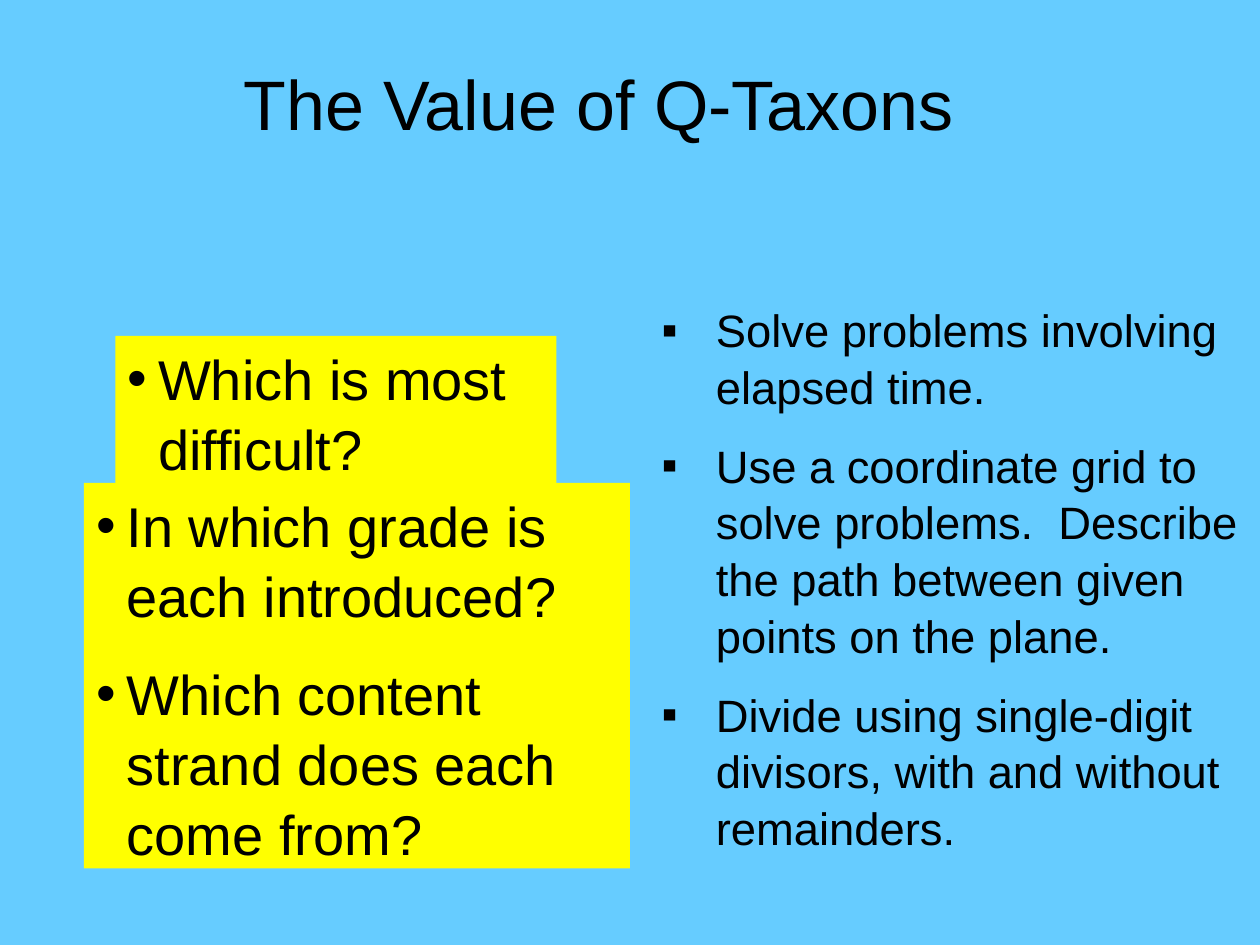
from pptx import Presentation, util as u
from pptx.dml.color import RGBColor
from pptx.enum import shapes, text
from pptx.oxml.ns import qn
from lxml import etree

SKY = RGBColor(0x66, 0xCC, 0xFF)
SUN = RGBColor(0xFF, 0xFF, 0x00)
INK = RGBColor(0, 0, 0)

deck = Presentation()
deck.slide_width, deck.slide_height = u.Inches(10), u.Inches(7.5)
W, H = deck.slide_width / 120, deck.slide_height / 90  # 120 x 90 grid
slide = deck.slides.add_slide(deck.slide_layouts[5])
slide.background.fill.solid()
slide.background.fill.fore_color.rgb = SKY


def grid(x, y, w, h):
    return [int(v) for v in (x * W, y * H, w * W, h * H)]


def fill_list(frame, lines, mark, size, left, hang):
    """Write bulleted paragraphs, half a line apart."""
    frame.word_wrap = True
    frame.vertical_anchor = text.MSO_ANCHOR.TOP
    for i, line in enumerate(lines):
        para = frame.paragraphs[0] if i == 0 else frame.add_paragraph()
        para.alignment = text.PP_ALIGN.LEFT
        para.line_spacing = 1.04
        if i:
            para.space_before = u.Pt(size / 2)
        props = para._p.get_or_add_pPr()
        props.set("marL", str(u.Inches(left)))
        props.set("indent", str(-u.Inches(hang)))
        etree.SubElement(props, qn("a:buFont")).set("typeface", "Arial")
        etree.SubElement(props, qn("a:buChar")).set("char", mark)
        run = para.add_run()
        run.text = line
        run.font.name, run.font.size = "Arial", u.Pt(size)
        run.font.color.rgb = INK


# Title
title = slide.shapes.title
title.left, title.top, title.width, title.height = grid(22, 3, 86, 11.4)
frame = title.text_frame
frame.vertical_anchor = text.MSO_ANCHOR.BOTTOM
para = frame.paragraphs[0]
para.alignment = text.PP_ALIGN.LEFT
run = para.add_run()
run.text = "The Value of Q-Taxons"
run.font.name, run.font.size = "Arial", u.Pt(40)
run.font.color.rgb = INK

# Skills on the right
skills = slide.shapes.add_textbox(*grid(55, 28, 65, 55))
fill_list(skills.text_frame, [
    "Solve problems involving elapsed time.",
    "Use a coordinate grid to solve problems.  Describe the path "
    "between given points on the plane.",
    "Divide using single-digit divisors, with and without remainders.",
], "▪", 25.9, 1, 0.43)

# Yellow question cards
cards = [
    (grid(11, 32, 42, 14), ["Which is most difficult?"]),
    (grid(8, 46, 52, 36.7), ["In which grade is each introduced?",
                             "Which content strand does each come from?"]),
]
for place, lines in cards:
    card = slide.shapes.add_shape(shapes.MSO_SHAPE.RECTANGLE, *place)
    card.shadow.inherit = False
    card.fill.solid()
    card.fill.fore_color.rgb = SUN
    card.line.fill.background()
    fill_list(card.text_frame, lines, "•", 32, 0.24, 0.24)

deck.save("out.pptx")
